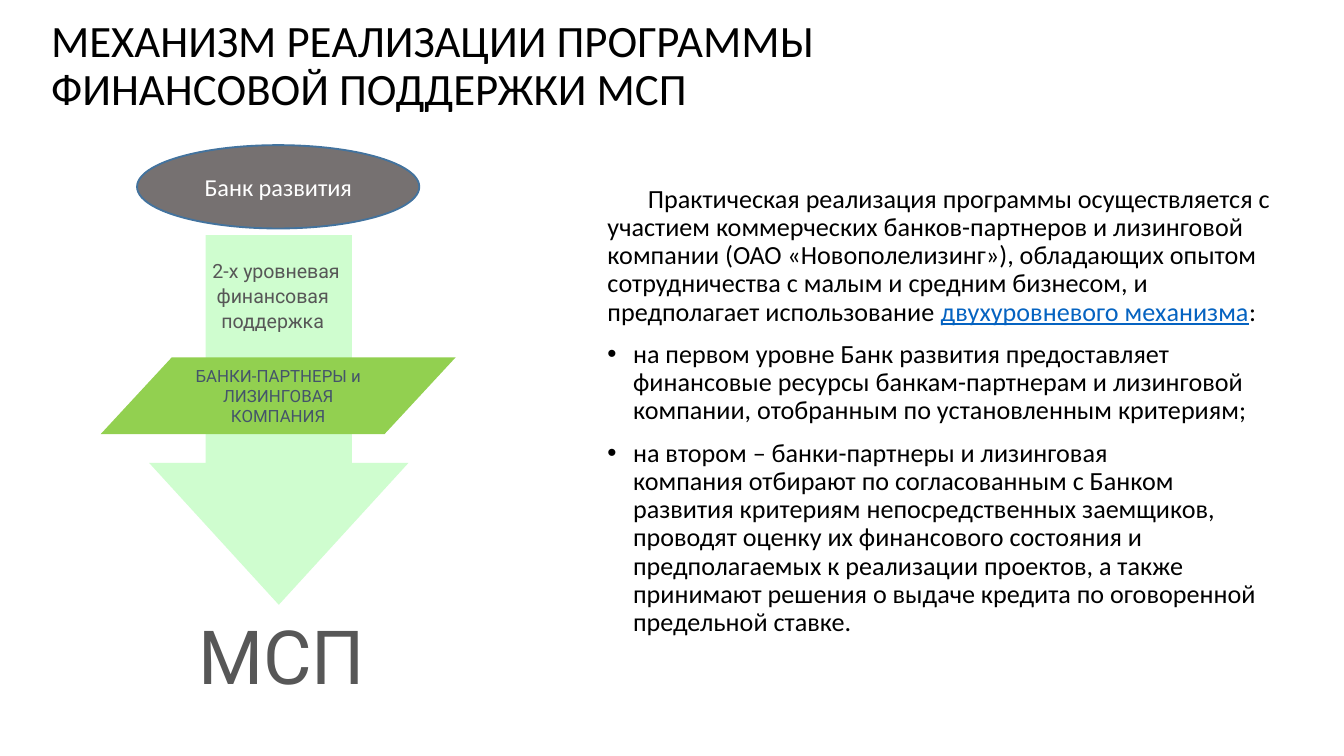
from lxml import etree
from pptx import Presentation
from pptx.dml.color import RGBColor as RGB
from pptx.enum.shapes import MSO_SHAPE as SHAPE
from pptx.enum.text import MSO_ANCHOR as ANCHOR, MSO_AUTO_SIZE as FIT, PP_ALIGN as ALIGN
from pptx.oxml.ns import qn
from pptx.util import Inches, Pt

BLACK, WHITE = RGB(0, 0, 0), RGB(255, 255, 255)
LINK = RGB(0x05, 0x63, 0xC1)
MINT, GREEN = RGB(0xCF, 0xFD, 0xCF), RGB(0x92, 0xD0, 0x50)
GREY, EDGE = RGB(0x76, 0x71, 0x71), RGB(0x43, 0x73, 0x9E)
DARK, SLATE = RGB(0x57, 0x57, 0x57), RGB(0x44, 0x54, 0x6A)
HARD = chr(160)  # no-break space

TITLE = "МЕХАНИЗМ РЕАЛИЗАЦИИ ПРОГРАММЫ \vФИНАНСОВОЙ ПОДДЕРЖКИ МСП"
INTRO = [
    ("Практическая реализация программы осуществляется с участием коммерческих "
     "банков-партнеров и лизинговой компании (ОАО «Новополелизинг»), обладающих опытом "
     "сотрудничества с малым и средним бизнесом, и предполагает использование ", {}),
    ("двухуровневого механизма", {"color": LINK, "underline": True}),
    (":", {}),
]
LEVELS = [
    "на первом уровне Банк развития предоставляет финансовые ресурсы банкам-партнерам и "
    "лизинговой компании, отобранным по установленным критериям;",
    f"на втором – банки-партнеры и лизинговая компания{HARD}отбирают по согласованным с Банком "
    "развития критериям непосредственных заемщиков, проводят оценку их финансового состояния "
    "и предполагаемых к реализации проектов, а также принимают решения о выдаче кредита по "
    "оговоренной предельной ставке.",
]


def style(font, color=BLACK, **form):
    for key, val in form.items():
        setattr(font, key, val)
    font.color.rgb = color


def place(shape, left, top, width, height):
    box = {"left": left, "top": top, "width": width, "height": height}
    for key, val in box.items():
        setattr(shape, key, Inches(val))


def indent(para, left, first, bullet=None):
    props = para._p.get_or_add_pPr()
    props.set("marL", str(Inches(left)))
    props.set("indent", str(Inches(first)))
    if bullet:
        font = etree.SubElement(props, qn("a:buFont"))
        font.set("typeface", "Arial")
        etree.SubElement(props, qn("a:buChar")).set("char", bullet)
    else:
        etree.SubElement(props, qn("a:buNone"))


def add_title(slide, *box):
    title = slide.shapes.title
    place(title, *box)
    frame = title.text_frame
    frame.auto_size, frame.vertical_anchor = FIT.NONE, ANCHOR.MIDDLE
    frame.margin_top = Inches(0.08)
    frame.text = TITLE
    para = frame.paragraphs[0]
    para.alignment, para.line_spacing = ALIGN.LEFT, 0.9
    style(para.font, name="Calibri", size=Pt(24))


def add_body(slide, *box):
    body = slide.placeholders[1]
    place(body, *box)
    frame = body.text_frame
    frame.auto_size, frame.vertical_anchor = FIT.NONE, ANCHOR.TOP
    for num, runs in enumerate([INTRO] + [[(text, {})] for text in LEVELS]):
        para = frame.add_paragraph() if num else frame.paragraphs[0]
        para.line_spacing, para.space_before = 0.9, Pt(7.5 if num else 0)
        if num:
            indent(para, 0.19, -0.19, "•")
        else:
            indent(para, 0, 0.3)
        for text, form in runs:
            run = para.add_run()
            run.text = text
            style(run.font, **{"name": "Calibri", "size": Pt(14), **form})


def add_part(slide, kind, box, fill=None, line=None, text="", form=None, pads=None):
    """Add one shape of the scheme; pads are left, top, right and bottom insets."""
    part = slide.shapes.add_shape(kind, *map(Inches, box))
    part.shadow.inherit = False
    if fill:
        part.fill.solid()
        part.fill.fore_color.rgb = fill
    else:
        part.fill.background()
    if line:
        part.line.color.rgb, part.line.width = line, Pt(1)
    else:
        part.line.fill.background()
    if text:
        frame = part.text_frame
        frame.word_wrap, frame.vertical_anchor = True, ANCHOR.MIDDLE
        for side, pad in zip(("left", "top", "right", "bottom"), pads or ()):
            setattr(frame, "margin_" + side, Inches(pad))
        para = frame.paragraphs[0]
        para.alignment = ALIGN.CENTER
        run = para.add_run()
        run.text = text
        style(run.font, **form)
    return part


def add_scheme(slide, left, top):
    def at(x, y, width, height):
        return left + x, top + y, width, height

    arrow = add_part(slide, SHAPE.DOWN_ARROW, at(0.36, 0.67, 1.93, 2.75), MINT)
    arrow.adjustments[0], arrow.adjustments[1] = 0.564, 0.547
    label = add_part(slide, SHAPE.ROUNDED_RECTANGLE, at(0.6, 0.84, 1.36, 0.55),
                     text="2-х уровневая финансовая поддержка",
                     form={"name": "Roboto", "size": Pt(10.5), "color": DARK},
                     pads=(0.11, 0.05, 0.11, 0.05))
    para = label.text_frame.paragraphs[0]
    para.line_spacing = 1.05
    indent(para, 0, 0.05)
    add_part(slide, SHAPE.FLOWCHART_DATA, at(0, 1.58, 2.64, 0.57), GREEN,
             text="БАНКИ-ПАРТНЕРЫ и ЛИЗИНГОВАЯ КОМПАНИЯ",
             form={"name": "Roboto", "size": Pt(9), "color": SLATE})
    add_part(slide, SHAPE.ROUNDED_RECTANGLE, at(0.42, 3.53, 1.73, 0.7), text="МСП",
             form={"name": "Roboto", "size": Pt(40), "color": DARK},
             pads=(0.23, 0.05, 0.11, 0.23))
    add_part(slide, SHAPE.OVAL, at(0.27, 0, 2.1, 0.62), GREY, EDGE, "Банк развития",
             {"name": "Calibri", "size": Pt(13), "color": WHITE})


def main():
    deck = Presentation()
    deck.slide_width = Inches(10)
    deck.slide_height = deck.slide_width * 9 // 16
    slide = deck.slides.add_slide(deck.slide_layouts[1])
    add_title(slide, 0.28, 0.09, 9, 0.79)
    add_body(slide, 4.42, 1.33, 5.14, 3.63)
    add_scheme(slide, 0.75, 1.08)
    deck.save("out.pptx")


if __name__ == "__main__":
    main()
